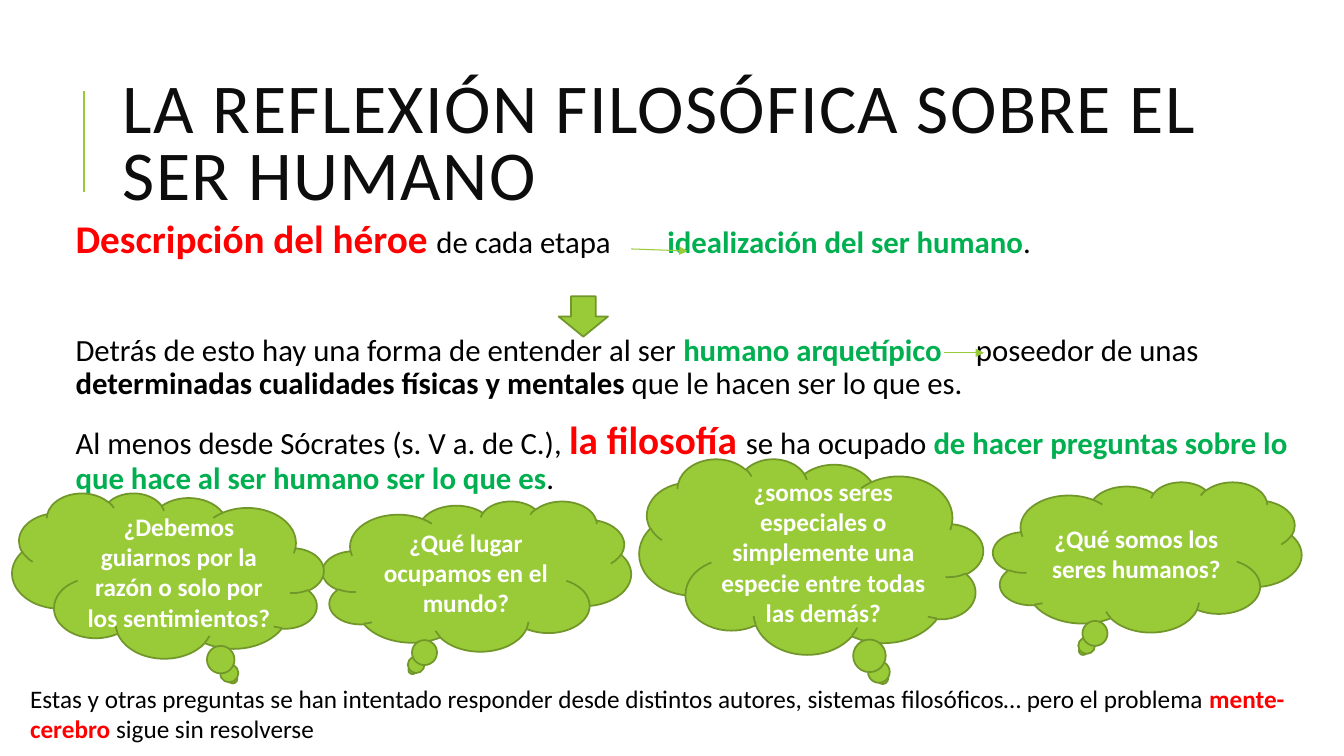
from lxml.etree import SubElement
from pptx import Presentation
from pptx.dml.color import RGBColor
from pptx.enum.shapes import MSO_CONNECTOR, MSO_SHAPE
from pptx.enum.text import MSO_ANCHOR, PP_ALIGN
from pptx.oxml.ns import qn
from pptx.util import Inches, Pt

FONT = "Calibri"
COLORS = {
    "title": "0D0D0D",
    "text": "000000",
    "hero": "FF0000",
    "ideal": "00B050",
    "accent": "99CB38",
    "outline": "719629",
    "white": "FFFFFF",
}

# Runs are (text, format) pairs
HERO = {"size": 28, "color": "hero", "bold": True}
IDEAL = {"color": "ideal", "bold": True}

# Each paragraph: runs, space before in points, tab stop in inches
REFLECTION = [
    ([("Descripción del héroe ", HERO),
      ("de cada etapa\t", {}),
      ("idealización del ser humano", IDEAL),
      (".", {})], 12, 5.87),
    ([("Detrás de esto hay una forma de entender al ser", {}),
      (" humano arquetípico\t", IDEAL),
      ("poseedor de unas ", {}),
      ("determinadas cualidades físicas y mentales ", {"bold": True}),
      ("que le hacen ser lo que es.", {})], 50, 8.93),
    ([("Al menos desde Sócrates (s. V a. de C.), ", {}),
      ("la filosofía ", HERO),
      ("se ha ocupado ", {}),
      ("de hacer preguntas sobre lo que hace al ser humano ser lo que es", IDEAL),
      (".", {})], 12, None),
]

# Each question: text, box, mirrored
QUESTIONS = [
    ("¿Qué somos los seres humanos?", (9.85, 4.78, 3.06, 1.49), False),
    ("¿somos seres especiales o simplemente una especie entre todas las demás?",
     (6.34, 4.55, 3.41, 1.94), True),
    ("¿Qué lugar ocupamos en el mundo?", (3.2, 4.97, 3.06, 1.49), False),
    ("¿Debemos guiarnos por la razón o solo por los sentimientos?",
     (0.12, 4.89, 3.09, 1.64), True),
]

CLOSING = [
    ("Estas y otras preguntas se han intentado responder desde distintos autores, "
     "sistemas filosóficos… pero el problema ", {}),
    ("mente- cerebro ", {"color": "hero", "bold": True}),
    ("sigue sin resolverse", {}),
]


def rgb(name):
    return RGBColor.from_string(COLORS[name])


def add_run(paragraph, text, size=22, color="text", bold=False, spacing=None):
    run = paragraph.add_run()
    run.text = text
    run.font.name = FONT
    run.font.size = Pt(size)
    run.font.bold = bold
    run.font.color.rgb = rgb(color)
    if spacing:
        run.font._element.set("spc", str(int(spacing * 100)))


def add_frame(slide, box, anchor=MSO_ANCHOR.TOP):
    frame = slide.shapes.add_textbox(*map(Inches, box)).text_frame
    frame.word_wrap = True
    frame.vertical_anchor = anchor
    return frame


def add_line(slide, start, end, width, arrow=False):
    line = slide.shapes.add_connector(
        MSO_CONNECTOR.STRAIGHT, *map(Inches, start + end))
    line.line.color.rgb = rgb("accent")
    line.line.width = Pt(width)
    if arrow:
        SubElement(line.line._get_or_add_ln(), qn("a:tailEnd"), type="triangle")
    SubElement(line._element.spPr, qn("a:effectLst"))


def add_green_shape(slide, kind, box):
    shape = slide.shapes.add_shape(kind, *map(Inches, box))
    shape.shadow.inherit = False
    shape.fill.solid()
    shape.fill.fore_color.rgb = rgb("accent")
    shape.line.color.rgb = rgb("outline")
    shape.line.width = Pt(1.25)
    return shape


def add_title(slide, box):
    left, top = box[:2]
    # Accent bar beside the title
    bar_x = left - 0.29
    add_line(slide, (bar_x, top + 1.26), (bar_x, top + 0.26), 1.5)
    heading = add_frame(slide, box, MSO_ANCHOR.MIDDLE).paragraphs[0]
    heading.line_spacing = 0.8
    add_run(heading, "LA REFLEXIÓN FILOSÓFICA SOBRE EL SER HUMANO",
            size=50, color="title", spacing=1)


def add_reflection(slide, box):
    left, top = box[:2]
    frame = add_frame(slide, box)
    frame.margin_left = frame.margin_right = Inches(0.05)
    frame.margin_top = frame.margin_bottom = Inches(0.05)
    for index, (runs, space_before, tab) in enumerate(REFLECTION):
        paragraph = frame.add_paragraph() if index else frame.paragraphs[0]
        paragraph.line_spacing = 0.9
        paragraph.space_before = Pt(space_before)
        paragraph.space_after = Pt(2)
        if tab:
            stops = SubElement(paragraph._p.get_or_add_pPr(), qn("a:tabLst"))
            SubElement(stops, qn("a:tab"), pos=str(Inches(tab)), algn="l")
        for text, style in runs:
            add_run(paragraph, text, **style)
    # Arrows linking the ideas
    add_line(slide, (left + 5.56, top + 0.34), (left + 6.12, top + 0.36), 0.75, arrow=True)
    add_green_shape(slide, MSO_SHAPE.DOWN_ARROW, (left + 4.84, top + 0.81, 0.49, 0.4))
    add_line(slide, (left + 8.66, top + 1.37), (left + 9.06, top + 1.37), 0.75, arrow=True)


def add_question(slide, question, box, mirrored):
    cloud = add_green_shape(slide, MSO_SHAPE.CLOUD_CALLOUT, box)
    if mirrored:
        cloud._element.spPr.xfrm.set("flipH", "1")
    frame = cloud.text_frame
    frame.word_wrap = True
    frame.vertical_anchor = MSO_ANCHOR.MIDDLE
    paragraph = frame.paragraphs[0]
    paragraph.alignment = PP_ALIGN.CENTER
    add_run(paragraph, question, size=18, color="white", bold=True)


def add_closing(slide, box):
    paragraph = add_frame(slide, box).paragraphs[0]
    for text, style in CLOSING:
        add_run(paragraph, text, size=18, **style)


def main():
    prs = Presentation()
    prs.slide_width = Inches(13.33)
    prs.slide_height = Inches(7.5)
    slide = prs.slides.add_slide(prs.slide_layouts[6])
    add_title(slide, (1.12, 0.64, 11.19, 1.64))
    add_reflection(slide, (0.7, 2.13, 12.16, 4.99))
    for question in QUESTIONS:
        add_question(slide, *question)
    add_closing(slide, (0.2, 6.73, 13.13, 0.71))
    prs.save("out.pptx")


if __name__ == "__main__":
    main()
